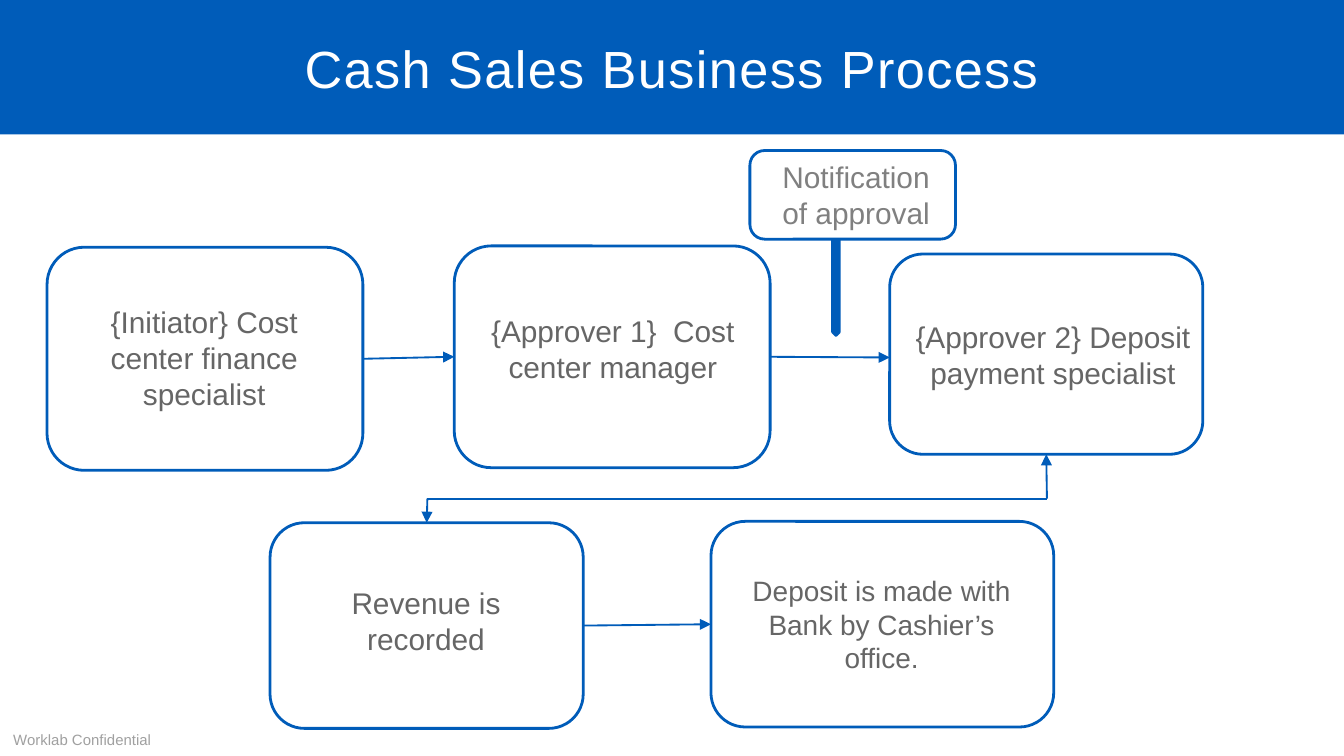
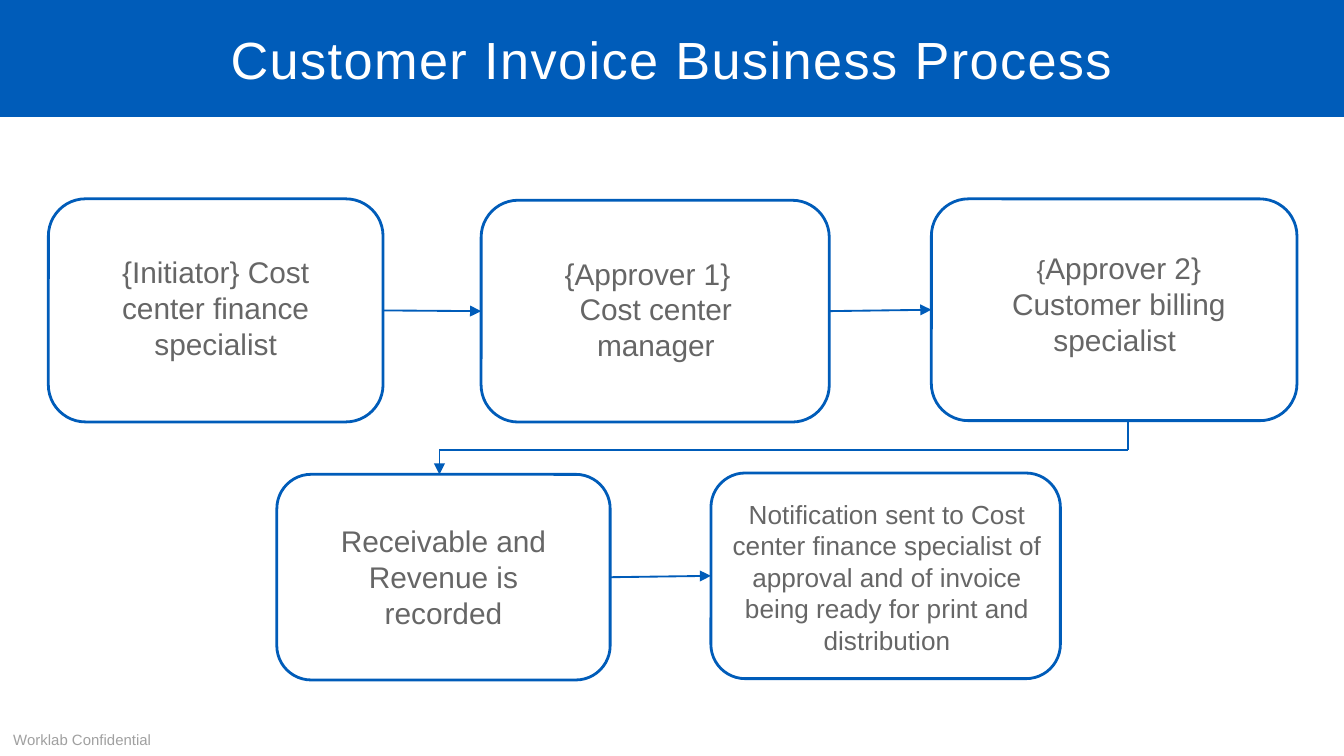
import pptx
import pptx.dml.color
import pptx.enum.shapes
import pptx.enum.text
import pptx.oxml
import pptx.oxml.ns
import pptx.util

PX = 9144
PAGE_WIDTH, PAGE_HEIGHT = 1000, 562
BLUE = pptx.dml.color.RGBColor(0x00, 0x5C, 0xB9)
WHITE = pptx.dml.color.RGBColor(0xFF, 0xFF, 0xFF)
TEXT_GREY = pptx.dml.color.RGBColor(0x66, 0x66, 0x66)
NOTE_GREY = pptx.dml.color.RGBColor(0x80, 0x80, 0x80)
FOOTER_GREY = pptx.dml.color.RGBColor(0xA0, 0xA0, 0xA0)
FONT = "Arial"
TOP, LEFT, BOTTOM, RIGHT = range(4)
JOIN_TOLERANCE = 2
SHAPES = pptx.enum.shapes.MSO_SHAPE
ALIGN = pptx.enum.text.PP_ALIGN
ANCHOR = pptx.enum.text.MSO_ANCHOR
FIT = pptx.enum.text.MSO_AUTO_SIZE

CASH_STEPS = [
    ((35, 84, 235, 166), (15, 37, 204, 91),
     [[("{Initiator} Cost center finance specialist", 16)]]),
    ((338, 83, 235, 165), (16, 45, 204, 64),
     [[("{Approver 1}  Cost center manager", 16)]]),
    ((662, 89, 233, 149), (-15, 43, 273, 64),
     [[("{Approver 2} Deposit payment specialist", 16)]]),
    ((201, 289, 233, 153), (14, 41, 204, 64),
     [[("Revenue is recorded", 16)]]),
    ((529, 288, 255, 153), (15, 34, 224, 86),
     [[("Deposit is made with Bank by Cashier’s office.", 15)]]),
]
INVOICE_STEPS = [
    ((36, 61, 249, 166), (13, 36, 223, 92),
     [[("{Initiator} Cost center finance specialist", 16)]]),
    ((358, 62, 259, 165), (28, 36, 204, 91),
     [[("{Approver 1}  ", 16)], [("Cost center manager", 16)]]),
    ((693, 61, 272, 165), (36, 33, 207, 91),
     [[("{", 14), ("Approver 2} Customer billing specialist ", 16)]]),
    ((206, 266, 248, 153), (22, 31, 204, 91),
     [[("Receivable and Revenue is recorded", 16)]]),
    ((529, 265, 260, 153), (2, 14, 258, 128),
     [[("Notification sent to Cost center finance specialist of approval "
        "and of invoice being ready for print and distribution", 14)]]),
]


def emu(*lengths):
    """Turn px lengths into EMU."""
    return [pptx.util.Emu(length * PX) for length in lengths]


def inside(outer, box):
    """Shift a box by the corner of the box that holds it."""
    return (outer[0] + box[0], outer[1] + box[1], box[2], box[3])


def write_text(shape, paragraphs, color=TEXT_GREY, align=ALIGN.CENTER,
               anchor=ANCHOR.TOP, fit=FIT.SHAPE_TO_FIT_TEXT, spacing=None):
    """Fill a shape with paragraphs of (text, size) spans."""
    frame = shape.text_frame
    frame.word_wrap = True
    frame.auto_size = fit
    frame.vertical_anchor = anchor
    for index, pieces in enumerate(paragraphs):
        para = frame.add_paragraph() if index else frame.paragraphs[0]
        para.alignment = align
        for text, size in pieces:
            span = para.add_run()
            span.text = text
            span.font.name = FONT
            span.font.size = pptx.util.Pt(size)
            span.font.color.rgb = color
            if spacing:
                span.font._element.set("spc", str(spacing))


def add_text(page, box, paragraphs, **formats):
    """Add a text box."""
    write_text(page.shapes.add_textbox(*emu(*box)), paragraphs, **formats)


def add_outlined(page, kind, box, fill=WHITE):
    """Add a preset shape with the blue outline."""
    shape = page.shapes.add_shape(kind, *emu(*box))
    shape.shadow.inherit = False
    shape.fill.solid()
    shape.fill.fore_color.rgb = fill
    shape.line.color.rgb = BLUE
    shape.line.width = pptx.util.Pt(1.5)
    return shape


def add_step(page, box, text_box, paragraphs, color=TEXT_GREY):
    """Add a rounded step with its text."""
    shape = add_outlined(page, SHAPES.ROUNDED_RECTANGLE, box)
    add_text(page, inside(box, text_box), paragraphs, color=color)
    return shape


def side_middle(shape, side):
    """Give the middle of a shape's side in px."""
    across = {LEFT: 0, RIGHT: 1}.get(side, 0.5)
    down = {TOP: 0, BOTTOM: 1}.get(side, 0.5)
    return ((shape.left + shape.width * across) / PX,
            (shape.top + shape.height * down) / PX)


def meets(point, joint):
    """Tell whether a point lies at the middle of a joint's side."""
    return joint is not None and all(
        abs(here - there) <= JOIN_TOLERANCE
        for here, there in zip(point, side_middle(*joint)))


def add_line(page, start, end, begin_at=None, end_at=None, arrow=True):
    """Add a thin line, joined to the (shape, side) joints that it meets."""
    line = page.shapes.add_connector(
        pptx.enum.shapes.MSO_CONNECTOR.STRAIGHT, *emu(*start, *end))
    if meets(start, begin_at):
        line.begin_connect(*begin_at)
    if meets(end, end_at):
        line.end_connect(*end_at)
    line.line.color.rgb = BLUE
    line.line.width = pptx.util.Pt(1)
    namespace = pptx.oxml.ns.nsdecls("a")
    if arrow:
        line.line._get_or_add_ln().append(
            pptx.oxml.parse_xml(f'<a:tailEnd {namespace} type="triangle"/>'))
    line._element.spPr.append(pptx.oxml.parse_xml(f"<a:effectLst {namespace}/>"))


def add_link(page, first, second, level):
    """Lead from one step to the next at a given height."""
    start_x = round(side_middle(first, RIGHT)[0])
    end_x = round(side_middle(second, LEFT)[0])
    add_line(page, (start_x, level), (end_x, level), (first, RIGHT), (second, LEFT))


def add_return(page, source, target, lane, source_x, target_x, arrow):
    """Lead from below the source along a lane to the top of the target."""
    source_end = (source_x, round(side_middle(source, BOTTOM)[1]))
    target_end = (target_x, round(side_middle(target, TOP)[1]))
    add_line(page, (source_x, lane), source_end, end_at=(source, BOTTOM), arrow=arrow)
    add_line(page, (target_x, lane), (source_x, lane), arrow=False)
    add_line(page, (target_x, lane), target_end, end_at=(target, TOP))


def add_diagram(page, area, steps, levels, lane, turns, return_arrow):
    """Draw the steps of a process and the lines between them."""
    left, top = area[:2]
    shapes = [add_step(page, inside(area, box), text_box, paragraphs)
              for box, text_box, paragraphs in steps]
    for first, level in zip((0, 1, 3), levels):
        add_link(page, shapes[first], shapes[first + 1], top + level)
    source_x, target_x = turns
    add_return(page, shapes[2], shapes[3], top + lane,
               left + source_x, left + target_x, return_arrow)


def add_notification(page, box):
    """Draw the approval note and its pointer."""
    pointer = add_outlined(page, SHAPES.PENTAGON, inside(box, (23, 94, 82, 5)), BLUE)
    pointer.rotation = 90
    add_step(page, box, (5, 1, 148, 64),
             [[("Notification of approval", 16)]], color=NOTE_GREY)


def add_page(deck, title, band_height):
    """Add a page with its title band and footer, and return the free area."""
    page = deck.slides.add_slide(deck.slide_layouts[5])
    band = page.shapes.title
    band.left, band.top, band.width, band.height = emu(0, 0, PAGE_WIDTH, band_height)
    band.fill.solid()
    band.fill.fore_color.rgb = BLUE
    write_text(band, [[(title, 28)]], color=WHITE, anchor=ANCHOR.MIDDLE,
               fit=FIT.NONE, spacing=80)
    add_text(page, (0, 532, 338, 30), [[("Worklab Confidential", 8)]],
             color=FOOTER_GREY, align=ALIGN.LEFT, anchor=ANCHOR.BOTTOM, fit=FIT.NONE)
    return page, (0, band_height, PAGE_WIDTH, PAGE_HEIGHT - band_height)


def main():
    """Build the deck."""
    deck = pptx.Presentation()
    deck.slide_width, = emu(PAGE_WIDTH)
    deck.slide_height = deck.slide_width * 9 // 16
    page, area = add_page(deck, "Cash Sales Business Process", 100)
    add_diagram(page, area, CASH_STEPS, levels=(166, 166, 365), lane=271,
                turns=(779, 318), return_arrow=True)
    add_notification(page, inside(area, (558, 12, 153, 66)))
    page, area = add_page(deck, "Customer Invoice Business Process", 87)
    add_diagram(page, area, INVOICE_STEPS, levels=(144, 143, 343), lane=248,
                turns=(839, 327), return_arrow=False)
    deck.save("out.pptx")


if __name__ == "__main__":
    main()
